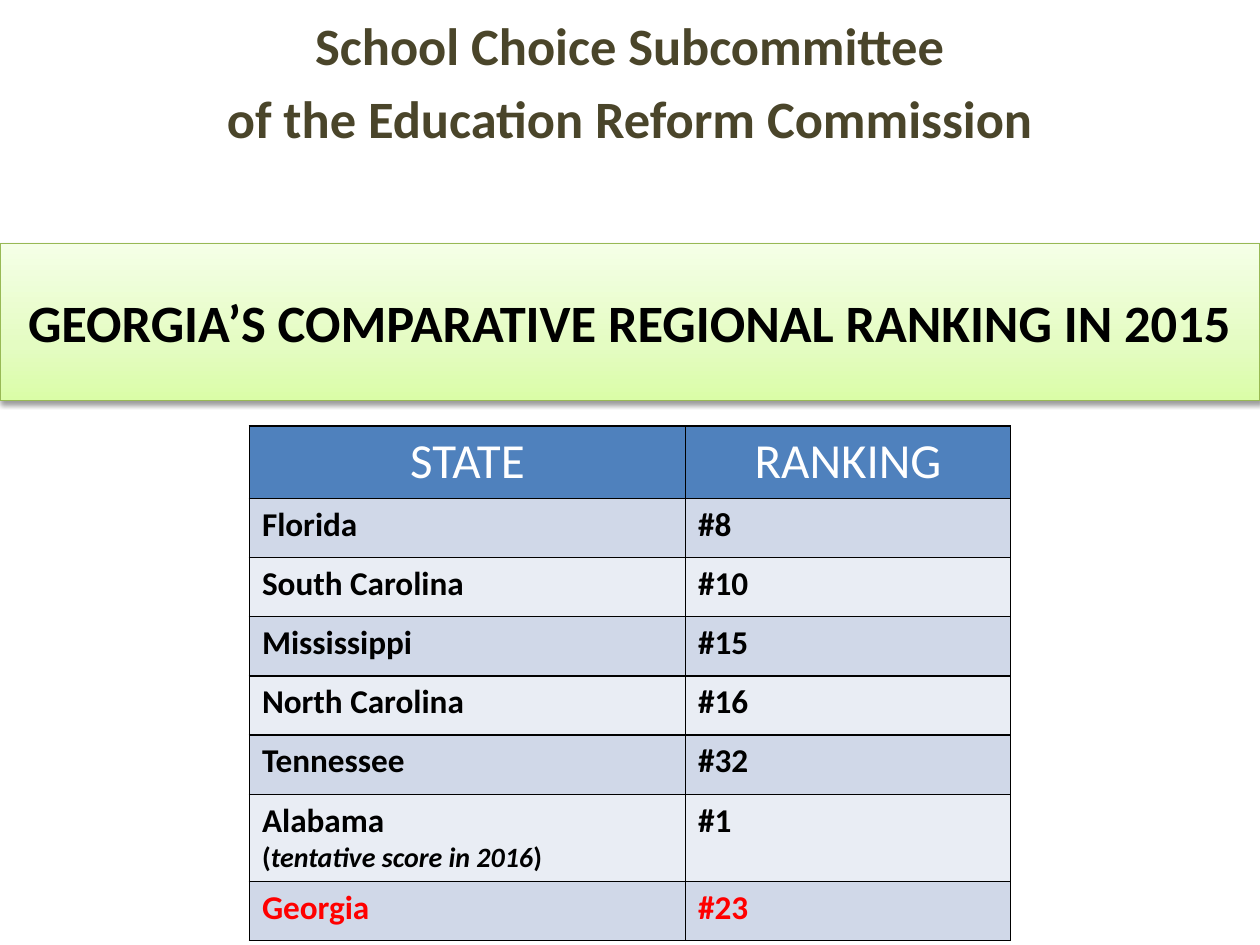
from copy import deepcopy

from lxml.etree import SubElement
from pptx import Presentation
from pptx.dml.color import RGBColor
from pptx.enum.shapes import MSO_SHAPE
from pptx.enum.text import MSO_ANCHOR, MSO_AUTO_SIZE, PP_ALIGN
from pptx.oxml import parse_xml
from pptx.oxml.ns import nsdecls, qn
from pptx.util import Inches, Pt

FONT = "Calibri"
BLACK, WHITE, RED = "000000", "FFFFFF", "FF0000"
OLIVE, HEADER_BLUE = "4A452A", "4F81BD"
BANDS = ("D0D8E8", "E9EDF4")
BANNER_LINE = "98B955"
BANNER_STOPS = ((0, "DAFDA7"), (0.35, "E4FCC2"), (1, "F5FFE7"))

HEADING = ("School Choice Subcommittee", "of the Education Reform Commission")
BANNER = "GEORGIA’S COMPARATIVE REGIONAL RANKING IN 2015"
HEADERS = ("STATE", "RANKING")
RANKINGS = (
    ("Florida", "#8"),
    ("South Carolina", "#10"),
    ("Mississippi", "#15"),
    ("North Carolina", "#16"),
    ("Tennessee", "#32"),
    ("Alabama", "#1"),
    ("Georgia", "#23"),
)
NOTES = {"Alabama": "tentative score in 2016"}
HIGHLIGHTED = "Georgia"
COLUMN_WIDTHS = (3.46, 2.58)
HEADER_HEIGHT, ROW_HEIGHT, NOTED_HEIGHT = 0.57, 0.47, 0.69


def rgb(color):
    return RGBColor.from_string(color)


def add_run(paragraph, text, size, color, bold=True, italic=False):
    run = paragraph.add_run()
    run.text = text
    font = run.font
    font.name, font.size, font.bold, font.italic = FONT, Pt(size), bold, italic
    font.color.rgb = rgb(color)


def place_heading(slide, left, top, width, height):
    title = slide.shapes.title
    title.left, title.top = Inches(left), Inches(top)
    title.width, title.height = Inches(width), Inches(height)
    frame = title.text_frame
    frame.auto_size = MSO_AUTO_SIZE.NONE
    frame.word_wrap = True
    frame.vertical_anchor = MSO_ANCHOR.TOP
    frame.margin_left = frame.margin_right = Inches(0.15)
    frame.margin_top = frame.margin_bottom = Inches(0.07)
    for index, line in enumerate(HEADING):
        paragraph = frame.add_paragraph() if index else frame.paragraphs[0]
        paragraph.alignment = PP_ALIGN.CENTER
        paragraph.space_before = Pt(6)
        add_run(paragraph, line, 30, OLIVE)


def fill_gradient(fill, stops):
    """Run the stops from the bottom edge to the top edge."""
    fill.gradient()
    fill.gradient_angle = 90
    stop_list = fill.gradient_stops[0]._gs.getparent()
    stop_list.append(deepcopy(stop_list[-1]))
    for stop, (position, color) in zip(fill.gradient_stops, stops):
        stop.position = position
        stop.color.rgb = rgb(color)


def add_drop_shadow(shape):
    shape.shadow.inherit = False
    effects = shape._element.spPr.find(qn("a:effectLst"))
    effects.append(parse_xml(
        f'<a:outerShdw {nsdecls("a")} blurRad="{Pt(3.1)}" dist="{Pt(1.6)}" '
        f'dir="5400000" rotWithShape="0"><a:srgbClr val="{BLACK}">'
        '<a:alpha val="38000"/></a:srgbClr></a:outerShdw>'))


def add_banner(slide, left, top, width, height):
    banner = slide.shapes.add_shape(
        MSO_SHAPE.RECTANGLE, Inches(left), Inches(top), Inches(width), Inches(height))
    fill_gradient(banner.fill, BANNER_STOPS)
    banner.line.color.rgb = rgb(BANNER_LINE)
    banner.line.width = Pt(0.75)
    add_drop_shadow(banner)
    frame = banner.text_frame
    frame.word_wrap = True
    frame.vertical_anchor = MSO_ANCHOR.MIDDLE
    frame.paragraphs[0].alignment = PP_ALIGN.CENTER
    add_run(frame.paragraphs[0], BANNER, 30, BLACK)


def style_cell(cell, color):
    """Outline the cell in black, then fill it."""
    properties = cell._tc.get_or_add_tcPr()
    for side in ("a:lnL", "a:lnR", "a:lnT", "a:lnB"):
        border = SubElement(properties, qn(side), w=str(Pt(1)))
        solid = SubElement(border, qn("a:solidFill"))
        SubElement(solid, qn("a:srgbClr"), val=BLACK)
    cell.fill.solid()
    cell.fill.fore_color.rgb = rgb(color)


def add_note(cell, note):
    paragraph = cell.text_frame.add_paragraph()
    for text, italic in (("(", False), (note, True), (")", False)):
        add_run(paragraph, text, 16, BLACK, italic=italic)


def add_ranking_table(slide, left, top):
    heights = [HEADER_HEIGHT] + [
        NOTED_HEIGHT if state in NOTES else ROW_HEIGHT for state, _ in RANKINGS]
    table = slide.shapes.add_table(
        len(heights), len(COLUMN_WIDTHS), Inches(left), Inches(top),
        Inches(sum(COLUMN_WIDTHS)), Inches(sum(heights))).table
    for column, width in zip(table.columns, COLUMN_WIDTHS):
        column.width = Inches(width)
    for row, height in zip(table.rows, heights):
        row.height = Inches(height)

    for cell, header in zip(table.rows[0].cells, HEADERS):
        style_cell(cell, HEADER_BLUE)
        paragraph = cell.text_frame.paragraphs[0]
        paragraph.alignment = PP_ALIGN.CENTER
        add_run(paragraph, header, 28, WHITE, bold=False)

    for index, ranking in enumerate(RANKINGS):
        state = ranking[0]
        color = RED if state == HIGHLIGHTED else BLACK
        cells = table.rows[index + 1].cells
        for cell, text in zip(cells, ranking):
            style_cell(cell, BANDS[index % 2])
            add_run(cell.text_frame.paragraphs[0], text, 19, color)
        if state in NOTES:
            add_note(table.cell(index + 1, 0), NOTES[state])


def main():
    deck = Presentation()
    deck.slide_width, deck.slide_height = Inches(10), Inches(7.5)
    slide = deck.slides.add_slide(deck.slide_layouts[5])
    place_heading(slide, 0, 0.03, 10, 1.9)
    add_banner(slide, 0, 1.93, 10, 1.25)
    add_ranking_table(slide, 1.98, 3.38)
    deck.save("out.pptx")


if __name__ == "__main__":
    main()
